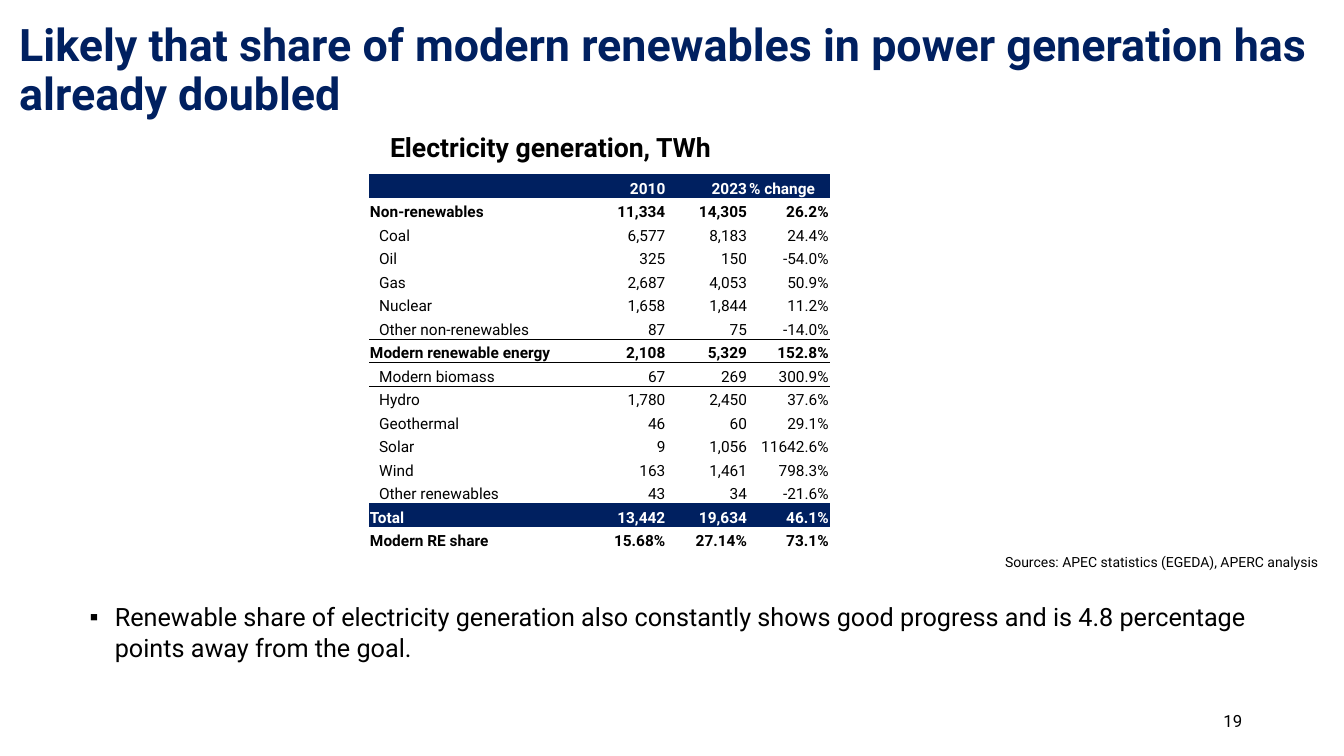
from lxml import etree
from pptx import Presentation
from pptx.dml.color import RGBColor
from pptx.enum.text import MSO_ANCHOR, MSO_AUTO_SIZE, PP_ALIGN
from pptx.oxml.ns import qn
from pptx.util import Inches, Pt

NAVY = RGBColor(0x00, 0x20, 0x60)
BLACK = RGBColor(0x00, 0x00, 0x00)
WHITE = RGBColor(0xFF, 0xFF, 0xFF)
LEFT, RIGHT = PP_ALIGN.LEFT, PP_ALIGN.RIGHT
TOP, MIDDLE, BOTTOM = MSO_ANCHOR.TOP, MSO_ANCHOR.MIDDLE, MSO_ANCHOR.BOTTOM
NO_AUTOFIT = MSO_AUTO_SIZE.NONE
FONT = "Roboto"
NO_TABLE_STYLE = "{2D5ABB26-0587-4C30-8999-92F81FD0307C}"


def write(frame, text, size=11, color=BLACK, bold=False, align=LEFT, anchor=TOP,
          line_spacing=None, space_after=None, indent=0, hanging=0, bullet=None):
    frame.word_wrap = True
    frame.vertical_anchor = anchor
    para = frame.paragraphs[0]
    para.alignment = align
    if line_spacing:
        para.line_spacing = line_spacing
    if space_after:
        para.space_after = Pt(space_after)
    properties = para._p.get_or_add_pPr()
    properties.set("marL", str(Inches(indent)))
    properties.set("indent", str(-Inches(hanging)))
    if bullet:
        etree.SubElement(properties, qn("a:buFont"), typeface="Arial")
        etree.SubElement(properties, qn("a:buChar"), char=bullet)
    if not text:
        etree.SubElement(para._p, qn("a:endParaRPr"), sz=str(size * 100))
        return
    span = para.add_run()
    span.text = text
    span.font.name = FONT
    span.font.size = Pt(size)
    span.font.bold = bold
    span.font.color.rgb = color


def add_border(cell, side):
    line = etree.SubElement(cell._tc.get_or_add_tcPr(), qn(f"a:{side}"), w=str(Pt(0.5)))
    fill = etree.SubElement(line, qn("a:solidFill"))
    etree.SubElement(fill, qn("a:srgbClr"), val=str(BLACK))


deck = Presentation()
deck.slide_width = Inches(13.33)
deck.slide_height = Inches(7.5)
page = deck.slides.add_slide(deck.slide_layouts[5])

title = page.shapes.title
title.left, title.top = Inches(-0.11), Inches(0.15)
title.width, title.height = Inches(13.33), Inches(1.12)
title.text_frame.auto_size = NO_AUTOFIT
write(title.text_frame,
      "Likely that share of modern renewables in power generation has already doubled",
      size=32, color=NAVY, bold=True, anchor=MIDDLE, line_spacing=0.9, indent=0.2)

text_boxes = [
    ("Electricity generation, TWh", (3.77, 1.26, 4.14, 0.36),
     dict(size=19, bold=True, anchor=MIDDLE, line_spacing=1.1)),
    ("Sources: APEC statistics (EGEDA), APERC analysis", (8.08, 5.44, 5.09, 0.27),
     dict(size=10, align=RIGHT)),
    ("Renewable share of electricity generation also constantly shows good progress "
     "and is 4.8 percentage points away from the goal.", (0.79, 5.92, 12.29, 0.85),
     dict(size=18, space_after=6, indent=0.25, hanging=0.25, bullet="▪")),
    ("19", (9.42, 6.95, 3, 0.4), dict(size=12, align=RIGHT, anchor=MIDDLE)),
]
for text, position, text_format in text_boxes:
    box = page.shapes.add_textbox(*map(Inches, position))
    write(box.text_frame, text, **text_format)

generation = [
    ("", "2010", "2023", "% change"),
    ("Non-renewables", "11,334", "14,305", "26.2%"),
    ("Coal", "6,577", "8,183", "24.4%"),
    ("Oil", "325", "150", "-54.0%"),
    ("Gas", "2,687", "4,053", "50.9%"),
    ("Nuclear", "1,658", "1,844", "11.2%"),
    ("Other non-renewables", "87", "75", "-14.0%"),
    ("Modern renewable energy", "2,108", "5,329", "152.8%"),
    ("Modern biomass", "67", "269", "300.9%"),
    ("Hydro", "1,780", "2,450", "37.6%"),
    ("Geothermal", "46", "60", "29.1%"),
    ("Solar", "9", "1,056", "11642.6%"),
    ("Wind", "163", "1,461", "798.3%"),
    ("Other renewables", "43", "34", "-21.6%"),
    ("Total", "13,442", "19,634", "46.1%"),
    ("Modern RE share", "15.68%", "27.14%", "73.1%"),
]
BANNERS = ("", "Total")
SUMMARIES = BANNERS + ("Non-renewables", "Modern renewable energy", "Modern RE share")
BORDERS = {
    "Other non-renewables": ["lnB"],
    "Modern renewable energy": ["lnT", "lnB"],
    "Modern biomass": ["lnT"],
}

table = page.shapes.add_table(len(generation), 4, Inches(3.66), Inches(1.73),
                              Inches(4.57), Inches(3.73)).table
table.first_row = False
table.horz_banding = False
table._tbl.tblPr.find(qn("a:tableStyleId")).text = NO_TABLE_STYLE
for column, width in zip(table.columns, (2.14, 0.81, 0.81, 0.81)):
    column.width = Inches(width)

for row_index, values in enumerate(generation):
    label = values[0]
    banner, summary = label in BANNERS, label in SUMMARIES
    table.rows[row_index].height = Inches(3.73 / len(generation))
    for column_index, value in enumerate(values):
        cell = table.cell(row_index, column_index)
        cell.margin_left = Inches(0.1 if column_index == 0 and not summary else 0.01)
        cell.margin_right = cell.margin_top = Inches(0.01)
        cell.margin_bottom = 0
        cell.vertical_anchor = BOTTOM
        for side in BORDERS.get(label, []):
            add_border(cell, side)
        if banner:
            cell.fill.solid()
            cell.fill.fore_color.rgb = NAVY
        else:
            cell.fill.background()
        write(cell.text_frame, value, color=WHITE if banner else BLACK, bold=summary,
              align=LEFT if column_index == 0 or value == "% change" else RIGHT,
              anchor=BOTTOM)

deck.save("out.pptx")
